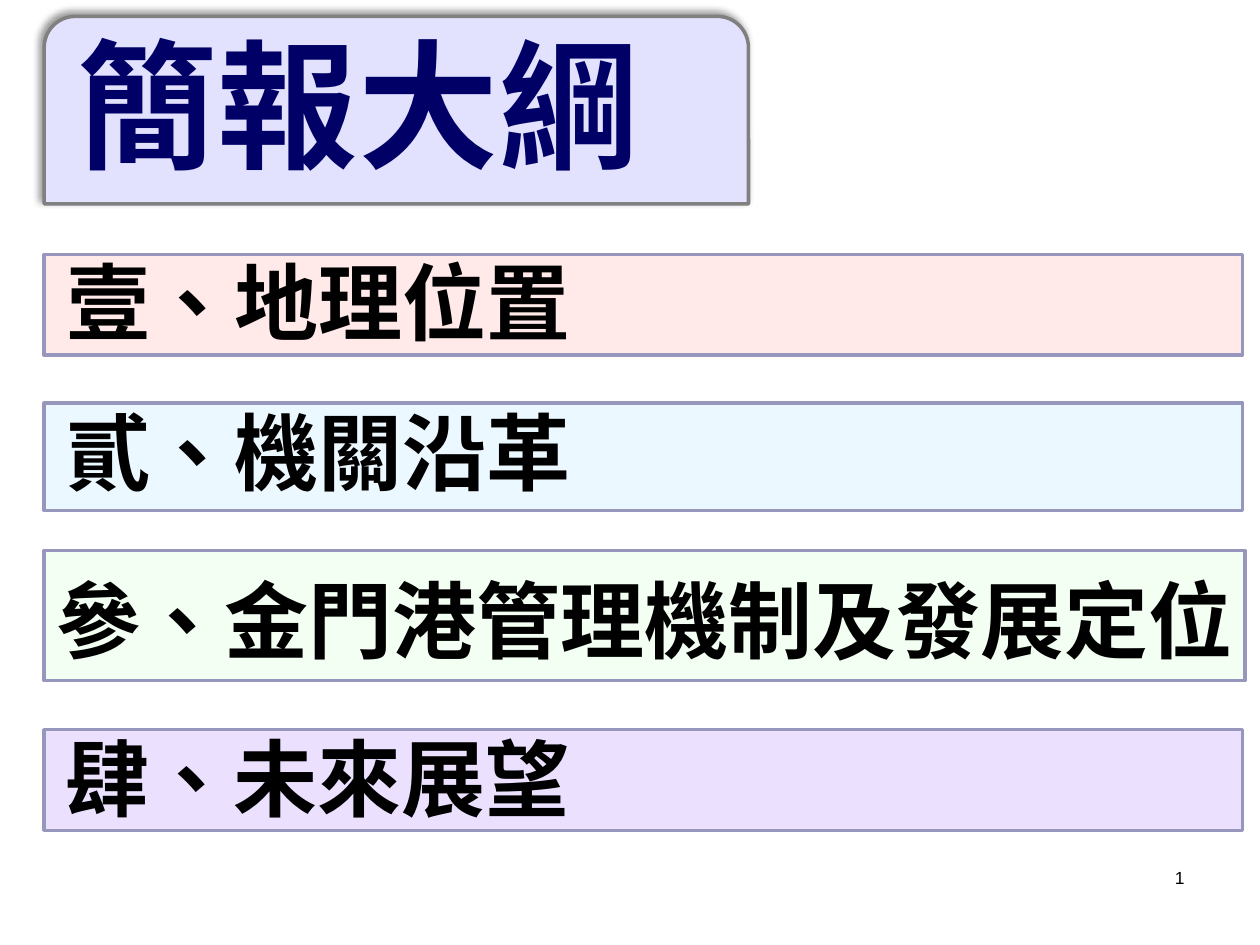
from lxml.etree import SubElement
from pptx import Presentation
from pptx.dml.color import RGBColor
from pptx.enum.lang import MSO_LANGUAGE_ID
from pptx.enum.shapes import MSO_SHAPE
from pptx.enum.text import MSO_ANCHOR, MSO_AUTO_SIZE, PP_ALIGN
from pptx.oxml.ns import qn
from pptx.util import Cm, Pt

COLORS = {
    "tab": "E2E2FF",
    "tab_border": "808080",
    "title": "000066",
    "text": "000000",
    "shadow": "000000",
    "row_border": "9797BD",
    "location": "FFCCCC",
    "history": "66CCFF",
    "management": "99FF99",
    "outlook": "6600FF",
}
CJK_FONT = "Noto Sans CJK SC"
BAR_LEFT = 0.89

TOPICS = [
    ("壹、地理位置", "location", 42, (5.13, 24.16, 2.03), (1.09, 4.93, 18.8)),
    ("貳、機關沿革", "history", 12, (8.13, 24.16, 2.16), (1.09, 7.95, 18.8)),
    ("參、金門港管理機制及發展定位", "management", 12, (11.1, 24.21, 2.62), (0.89, 11.33, 24.21)),
    ("肆、未來展望", "outlook", 12, (14.71, 24.16, 2.03), (1.07, 14.53, 18.8)),
]


def rgb(name):
    return RGBColor.from_string(COLORS[name])


def place(shape, left, top, width, height):
    shape.left, shape.top = Cm(left), Cm(top)
    shape.width, shape.height = Cm(width), Cm(height)


def write(shape, text, size, color="text", font=CJK_FONT, bold=True,
          align=PP_ALIGN.LEFT, tracking=0):
    frame = shape.text_frame
    frame.word_wrap = True
    frame.auto_size = MSO_AUTO_SIZE.NONE
    frame.vertical_anchor = MSO_ANCHOR.TOP
    frame.margin_right = 0
    paragraph = frame.paragraphs[0]
    paragraph.alignment = align
    paragraph.line_spacing = 1.0
    run = paragraph.add_run()
    run.text = text
    run.font.size = Pt(size)
    run.font.bold = bold
    run.font.name = font
    run.font.language_id = MSO_LANGUAGE_ID.TRADITIONAL_CHINESE
    run.font.color.rgb = rgb(color)
    properties = run.font._element
    SubElement(properties, qn("a:ea"), typeface=font)
    if tracking:
        properties.set("spc", str(tracking))
    return run


def add_panel(slide, preset, bounds, fill, border, opacity=100):
    panel = slide.shapes.add_shape(preset, *map(Cm, bounds))
    panel.shadow.inherit = False
    panel.fill.solid()
    panel.fill.fore_color.rgb = rgb(fill)
    panel.line.color.rgb = rgb(border)
    panel.line.width = Pt(2)
    if opacity < 100:
        color = panel._element.spPr.find(qn("a:solidFill"))[0]
        SubElement(color, qn("a:alpha"), val=str(opacity * 1000))
    return panel


def add_shadow(panel):
    effects = panel._element.spPr.find(qn("a:effectLst"))
    shadow = SubElement(effects, qn("a:outerShdw"), blurRad=str(Pt(4)),
                        dist=str(Pt(3)), dir=str(225 * 60000), rotWithShape="0")
    color = SubElement(shadow, qn("a:srgbClr"), val=COLORS["shadow"])
    SubElement(color, qn("a:alpha"), val="40000")


def add_heading(slide):
    tab = add_panel(slide, MSO_SHAPE.ROUND_2_SAME_RECTANGLE,
                    (BAR_LEFT, 0.33, 14.2, 3.78), "tab", "tab_border")
    add_shadow(tab)
    title = slide.shapes.title
    tab._element.addnext(title._element)
    place(title, 1.3, 0.25, 13.41, 3.68)
    write(title, "簡報大綱", 80, color="title", align=PP_ALIGN.JUSTIFY, tracking=50)


def add_topic(slide, text, fill, opacity, bar, label):
    add_panel(slide, MSO_SHAPE.RECTANGLE, (BAR_LEFT, *bar),
              fill, "row_border", opacity)
    left, top, width = label
    box = slide.shapes.add_textbox(Cm(left), Cm(top), Cm(width), Cm(2.31))
    write(box, text, 48)


def add_slide_number(slide):
    box = slide.shapes.add_textbox(Cm(18.21), Cm(17.35), Cm(5.92), Cm(1.27))
    number = write(box, "1", 10, font="Arial", bold=False, align=PP_ALIGN.RIGHT)
    box.text_frame.margin_right = Cm(0.25)
    field = number._r
    field.tag = qn("a:fld")
    field.set("id", "{B6F15528-21DE-4FAA-801E-634DDDAF4B2B}")
    field.set("type", "slidenum")


def main():
    presentation = Presentation()
    presentation.slide_width, presentation.slide_height = Cm(25.4), Cm(19.05)
    slide = presentation.slides.add_slide(presentation.slide_layouts[5])
    add_slide_number(slide)
    add_heading(slide)
    for topic in TOPICS:
        add_topic(slide, *topic)
    presentation.save("out.pptx")


if __name__ == "__main__":
    main()
